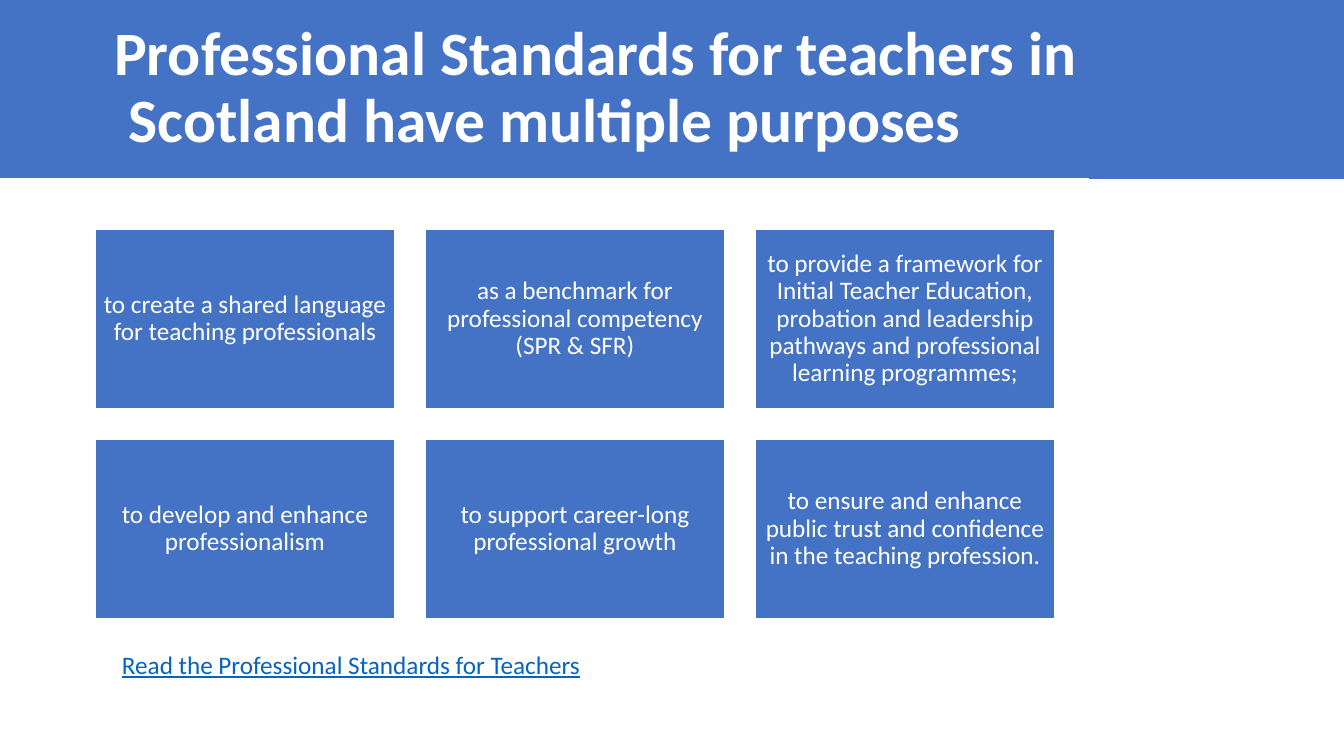
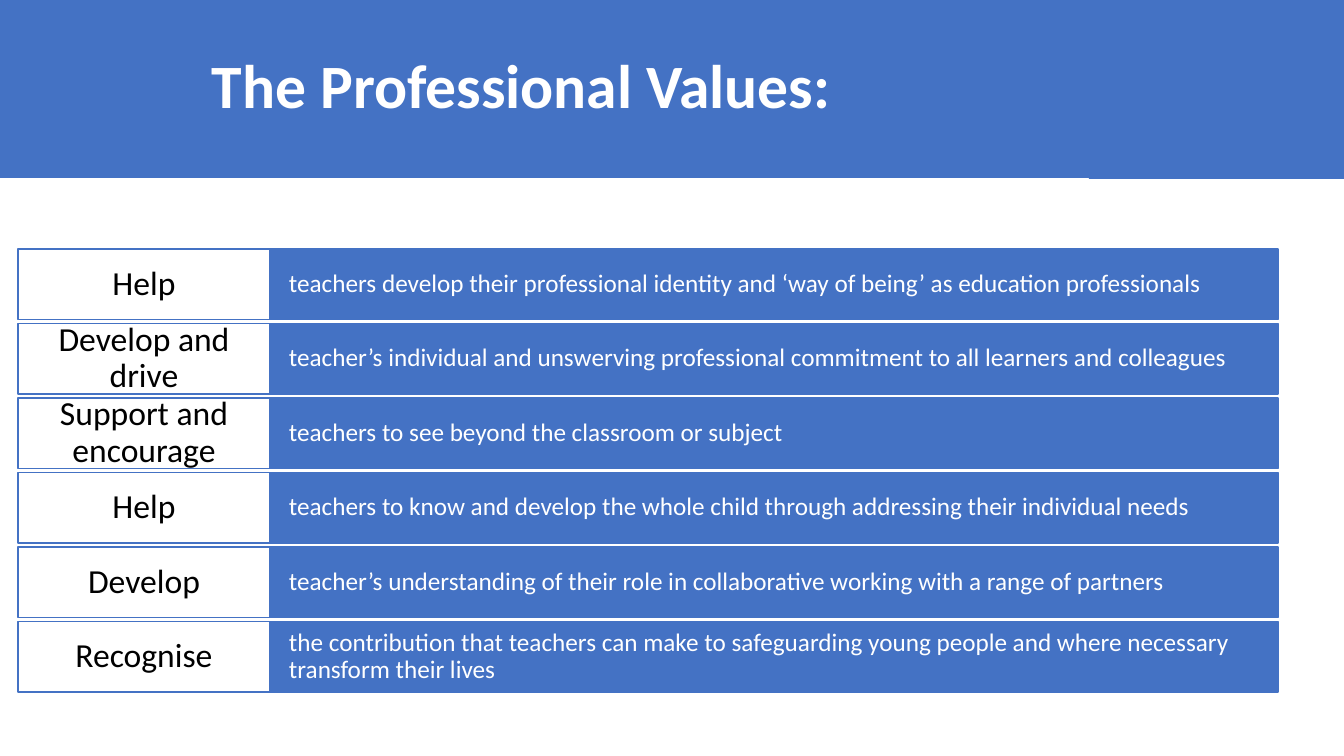
from dataclasses import dataclass

from pptx import Presentation
from pptx.dml.color import RGBColor
from pptx.enum.shapes import MSO_SHAPE
from pptx.enum.text import MSO_ANCHOR, MSO_AUTO_SIZE, PP_ALIGN
from pptx.util import Pt

RECTANGLE = MSO_SHAPE.RECTANGLE
MIDDLE, TOP = MSO_ANCHOR.MIDDLE, MSO_ANCHOR.TOP
LEFT, CENTER = PP_ALIGN.LEFT, PP_ALIGN.CENTER
NO_AUTOFIT = MSO_AUTO_SIZE.NONE
EMU_PER_PX = 914400 / 100.8
TITLE_ONLY = 5


@dataclass(frozen=True)
class Theme:
    font: str = "Calibri"
    blue: RGBColor = RGBColor(0x44, 0x72, 0xC4)
    white: RGBColor = RGBColor(0xFF, 0xFF, 0xFF)
    black: RGBColor = RGBColor(0, 0, 0)
    link: RGBColor = RGBColor(0x05, 0x63, 0xC1)
    title_size: int = 44
    label_size: int = 24
    body_size: int = 18


THEME = Theme()


def px(*lengths):
    """Turn pixel lengths into a list of EMU values."""
    return [round(length * EMU_PER_PX) for length in lengths]


def write(shape, text, size=THEME.body_size, color=THEME.white, align=CENTER,
          anchor=MIDDLE, bold=False, underline=False, spacing=0.9,
          inset_x=7, inset_y=7, indent=0):
    frame = shape.text_frame
    frame.word_wrap = True
    frame.auto_size = NO_AUTOFIT
    frame.vertical_anchor = anchor
    frame.margin_left, frame.margin_right = px(inset_x, inset_x)
    frame.margin_top, frame.margin_bottom = px(inset_y, inset_y)
    frame.text = text
    paragraph = frame.paragraphs[0]
    paragraph.alignment = align
    paragraph.line_spacing = spacing
    if indent:
        paragraph._p.get_or_add_pPr().set("indent", str(px(indent)[0]))
    font = paragraph.runs[0].font
    font.name, font.size = THEME.font, Pt(size)
    font.bold, font.underline = bold, underline
    font.color.rgb = color


def add_box(slide, left, top, width, height, fill=THEME.blue, line=None):
    box = slide.shapes.add_shape(RECTANGLE, *px(left, top, width, height))
    box.shadow.inherit = False
    box.fill.solid()
    box.fill.fore_color.rgb = fill
    if line is None:
        box.line.fill.background()
    else:
        box.line.color.rgb = line
        box.line.width = Pt(1)
    return box


prs = Presentation()
prs.slide_width, prs.slide_height = px(1344, 756)
layout = prs.slide_layouts[TITLE_ONLY]

# Title bands: each slide's title, and the rest of the band in the layout
TITLES = [
    ("Professional Standards for teachers in Scotland have multiple purposes",
     CENTER, 101),
    ("The Professional Values:", LEFT, 202),
]
slides = []
for heading, align, indent in TITLES:
    slide = prs.slides.add_slide(layout)
    title = slide.shapes.title
    title.left, title.top, title.width, title.height = px(0, 0, 1091, 178)
    title.fill.solid()
    title.fill.fore_color.rgb = THEME.blue
    write(title, heading, size=THEME.title_size, align=align, bold=True,
          inset_x=10, inset_y=5, indent=indent)
    slides.append(slide)
purposes_slide, values_slide = slides

band_end = add_box(purposes_slide, 1089, 0, 255, 179)
band_end.element.nvSpPr.cNvPr.set("id", "20")
layout.shapes.element.append(band_end.element)

# Purposes: three cards to a row
PURPOSES = [
    "to create a shared language for teaching professionals",
    "as a benchmark for professional competency (SPR & SFR)",
    "to provide a framework for Initial Teacher Education, probation and "
    "leadership pathways and professional learning programmes;",
    "to develop and enhance professionalism",
    "to support career-long professional growth",
    "to ensure and enhance public trust and confidence in the teaching "
    "profession.",
]
CARD_WIDTH, CARD_HEIGHT, CARD_GAP = 300, 180, 30
for index, purpose in enumerate(PURPOSES):
    row, column = divmod(index, 3)
    card = add_box(purposes_slide,
                   95 + column * (CARD_WIDTH + CARD_GAP),
                   229 + row * (CARD_HEIGHT + CARD_GAP),
                   CARD_WIDTH, CARD_HEIGHT, line=THEME.white)
    write(card, purpose)

standards_link = purposes_slide.shapes.add_textbox(*px(112, 644, 956, 40))
write(standards_link, "Read the Professional Standards for Teachers",
      color=THEME.link, align=LEFT, anchor=TOP, underline=True, spacing=1.0,
      inset_x=10, inset_y=5)

# Values: one label and one description to a row
VALUES = [
    ("Help", "teachers develop their professional identity and ‘way of being’ "
             "as education professionals"),
    ("Develop and drive", "teacher’s individual and unswerving professional "
                          "commitment to all learners and colleagues"),
    ("Support and encourage",
     "teachers to see beyond the classroom or subject"),
    ("Help", "teachers to know and develop the whole child through addressing "
             "their individual needs"),
    ("Develop", "teacher’s understanding of their role in collaborative "
                "working with a range of partners"),
    ("Recognise", "the contribution that teachers can make to safeguarding "
                  "young people and where necessary transform their lives"),
]
ROWS_TOP, ROWS_HEIGHT, ROW_GAP = 249, 443, 4
LABEL_LEFT, LABEL_WIDTH, DESCRIPTION_WIDTH = 18, 252, 1008
row_height = (ROWS_HEIGHT - ROW_GAP * (len(VALUES) - 1)) / len(VALUES)
for index, (verb, aim) in enumerate(VALUES):
    top = ROWS_TOP + index * (row_height + ROW_GAP)
    description = add_box(values_slide, LABEL_LEFT + LABEL_WIDTH, top,
                          DESCRIPTION_WIDTH, row_height, line=THEME.blue)
    write(description, aim, align=LEFT, inset_x=19)
    label = add_box(values_slide, LABEL_LEFT, top, LABEL_WIDTH, row_height,
                    fill=THEME.white, line=THEME.blue)
    write(label, verb, size=THEME.label_size, color=THEME.black, inset_x=13)

prs.save("out.pptx")
